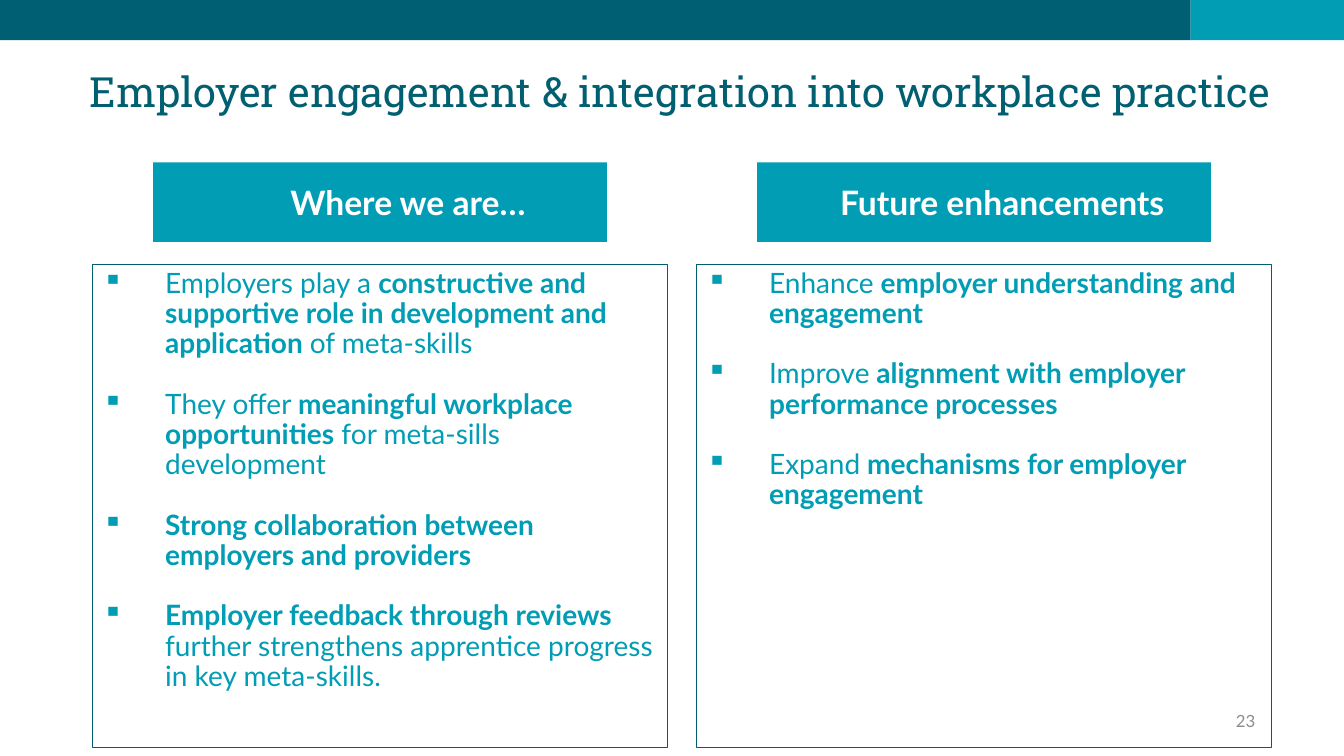
from typing import NamedTuple

from lxml.etree import SubElement
from pptx import Presentation
from pptx.dml.color import RGBColor
from pptx.enum.shapes import MSO_SHAPE as Shape
from pptx.enum.text import MSO_ANCHOR as Anchor, MSO_AUTO_SIZE as Fit, PP_ALIGN as Align
from pptx.oxml.ns import qn
from pptx.util import Emu, Pt

PX = 9144  # 100 px to the inch
DARK, TEAL, WHITE, GREY = "005F71", "009DB5", "FFFFFF", "8C8C8C"
LATO, SLAB = "Lato", "Roboto Slab"
INDENT = 62


class Box(NamedTuple):
    left: int
    top: int
    width: int
    height: int


class Column(NamedTuple):
    left: int
    head: str
    label: Box
    points: list[str]  # bold parts stand between asterisks


COLUMNS = [
    Column(92, "Where we are…", Box(237, 180, 335, 61), [
        "Employers play a *constructive and supportive role in development and application *of meta-skills",
        "They offer *meaningful workplace opportunities* for meta-sills development",
        "*Strong collaboration between employers and providers*",
        "*Employer feedback through reviews *further strengthens apprentice progress in key meta‑skills.",
    ]),
    Column(691, "Future enhancements", Box(787, 180, 414, 31), [
        "Enhance* employer understanding and engagement*",
        "Improve* alignment with employer performance processes*",
        "Expand* mechanisms for employer engagement*",
    ]),
]


def px(length: int) -> Emu:
    return Emu(length * PX)


def rgb(code: str) -> RGBColor:
    return RGBColor.from_string(code)


def style(para, size: float, face: str, color: str, bold: bool | None = None) -> None:
    font = para.font
    font.size, font.name, font.bold = Pt(size), face, bold
    font.color.rgb = rgb(color)


def rect(box: Box, fill: str | None = None, line: str | None = None):
    shape = slide.shapes.add_shape(Shape.RECTANGLE, *map(px, box))
    shape.shadow.inherit = False
    if fill:
        shape.fill.solid()
        shape.fill.fore_color.rgb = rgb(fill)
    else:
        shape.fill.background()
    if line:
        shape.line.color.rgb = rgb(line)
        shape.line.width = Pt(0.75)
    else:
        shape.line.fill.background()
    return shape


def label(box: Box, text: str, align: Align, size: int, color: str,
          anchor: Anchor = Anchor.TOP, space: float = 1.0, bold: bool = False) -> None:
    frame = slide.shapes.add_textbox(*map(px, box)).text_frame
    frame.word_wrap = True
    frame.vertical_anchor = anchor
    para = frame.paragraphs[0]
    para.text, para.alignment, para.line_spacing = text, align, space
    style(para, size, LATO, color, bold)


def bullets(shape, points: list[str]) -> None:
    frame = shape.text_frame
    frame.word_wrap = True
    frame.vertical_anchor = Anchor.TOP
    for i, point in enumerate(points):
        para = frame.add_paragraph() if i else frame.paragraphs[0]
        props = para._p.get_or_add_pPr()
        props.set("marL", str(px(INDENT)))
        props.set("indent", str(-px(INDENT)))
        SubElement(props, qn("a:buChar"), char="▪")
        para.alignment, para.line_spacing = Align.LEFT, 0.9
        if i:
            para.space_before = Pt(21.6)
        style(para, 20, LATO, TEAL)
        for k, part in enumerate(point.split("*")):
            if part:
                run = para.add_run()
                run.text, run.font.bold = part, k % 2 == 1


deck = Presentation()
deck.slide_width, deck.slide_height = px(1333), px(750)
slide = deck.slides.add_slide(deck.slide_layouts[5])

# Top band
rect(Box(0, 0, 1181, 40), "005F72")
rect(Box(1181, 0, 152, 40), TEAL)

# Title
title = slide.shapes.title
title.left, title.top, title.width, title.height = map(px, Box(79, 74, 1223, 74))
frame = title.text_frame
frame.text = "Employer engagement & integration into workplace practice"
frame.auto_size, frame.word_wrap, frame.vertical_anchor = Fit.NONE, True, Anchor.TOP
para = frame.paragraphs[0]
para.alignment, para.line_spacing = Align.LEFT, 0.7
style(para, 29.7, SLAB, DARK)

# Slide number
label(Box(955, 695, 300, 40), "23", Align.RIGHT, 12, GREY, Anchor.MIDDLE)

# Columns
for col in COLUMNS:
    bullets(rect(Box(col.left, 262, 570, 480), line=DARK), col.points)
    rect(Box(col.left + 60, 161, 450, 79), TEAL)
    label(col.label, col.head, Align.CENTER, 24, WHITE, space=0.9, bold=True)

deck.save("out.pptx")
